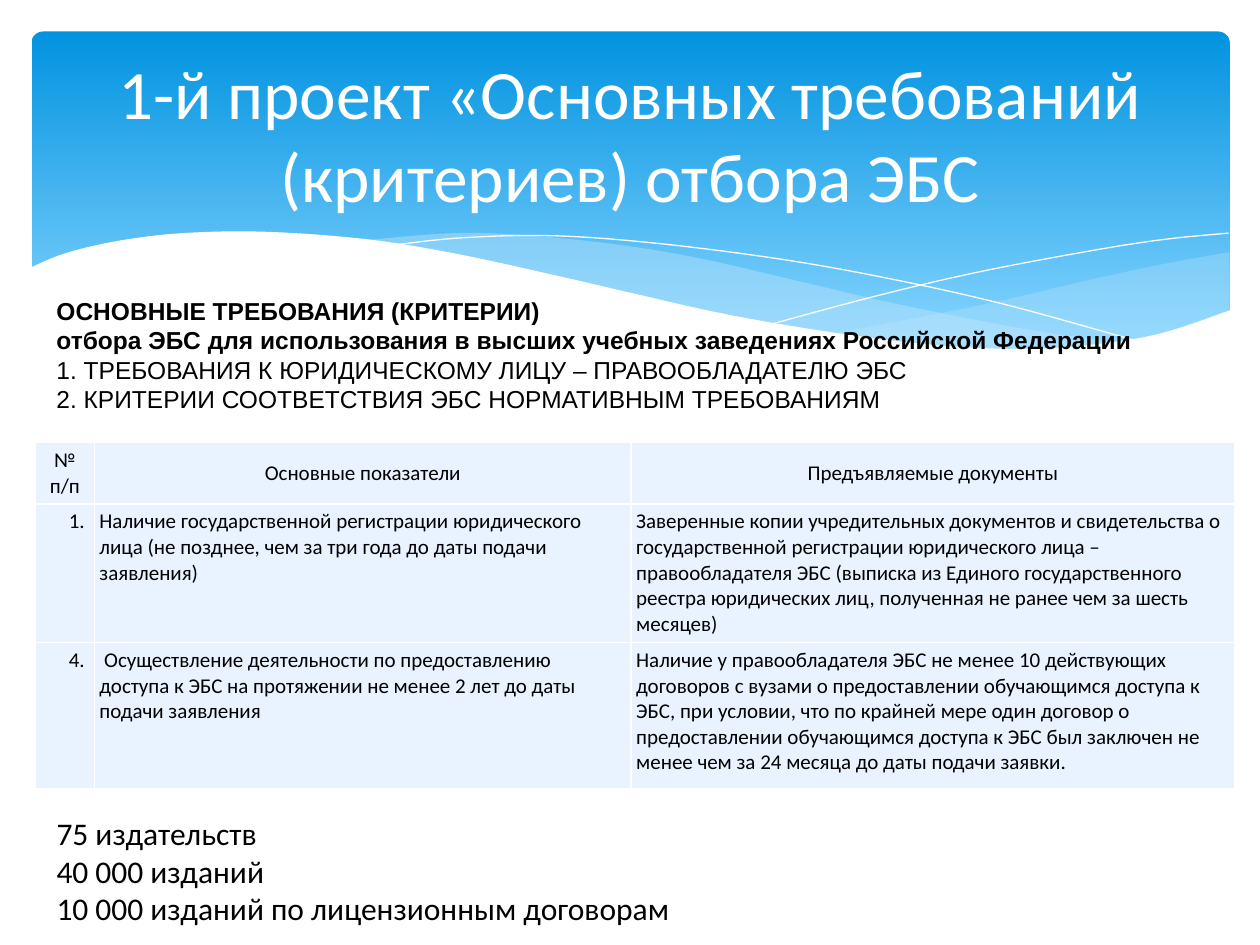
from lxml.etree import SubElement
from pptx import Presentation
from pptx.dml.color import RGBColor as RGB
from pptx.enum.shapes import MSO_SHAPE as SHAPE
from pptx.enum.text import MSO_ANCHOR as ANCHOR, PP_ALIGN as ALIGN
from pptx.oxml.ns import qn
from pptx.util import Inches, Pt

COLS, ROWS = 100, 75  # layout grid over the whole slide
COLORS = {"top": "0293E0", "bottom": "83D3FE", "wave": "C6E7FC",
          "cell": "E8F3FF", "white": "FFFFFF", "text": "000000"}


def smooth(points, steps=6):
    """Catmull-Rom curve through the points."""
    pts = [points[0], *points, points[-1]]
    curve = [points[0]]
    for a, b, c, d in zip(pts, pts[1:], pts[2:], pts[3:]):
        for i in range(1, steps + 1):
            t = i / steps
            curve.append(tuple(
                (2 * q + (r - p) * t + (2 * p - 5 * q + 4 * r - u) * t ** 2
                 + (3 * q - p - 3 * r + u) * t ** 3) / 2
                for p, q, r, u in zip(a, b, c, d)))
    return curve


class Deck:
    font = "Calibri"

    def __init__(self):
        self.prs = Presentation()
        self.prs.slide_width, self.prs.slide_height = Inches(10), Inches(7.5)
        self.s = self.prs.slides.add_slide(self.prs.slide_layouts[5])

    def x(self, col):
        return round(self.prs.slide_width * col / COLS)

    def y(self, row):
        return round(self.prs.slide_height * row / ROWS)

    def box(self, left, top, width, height):
        return self.x(left), self.y(top), self.x(width), self.y(height)

    def color(self, name):
        return RGB.from_string(COLORS[name])

    def set_lines(self, tf, lines, size, font=None, color="text", align=ALIGN.LEFT, bold=0):
        """Fill a text frame; the first `bold` lines are bold."""
        for i, line in enumerate(lines):
            p = tf.paragraphs[0] if i == 0 else tf.add_paragraph()
            p.text, p.alignment = line, align
            p.font.name, p.font.size = font or self.font, Pt(size)
            p.font.bold = i < bold
            p.font.color.rgb = self.color(color)

    def title(self, text, box, size):
        sp = self.s.shapes.title
        self.s.shapes._spTree.append(sp._element)  # bring above the banner
        sp.left, sp.top, sp.width, sp.height = self.box(*box)
        sp.text_frame.vertical_anchor = ANCHOR.MIDDLE
        sp.text_frame.word_wrap = True
        self.set_lines(sp.text_frame, [text], size, color="white", align=ALIGN.CENTER)

    def text(self, lines, box, size, **style):
        tf = self.s.shapes.add_textbox(*self.box(*box)).text_frame
        tf.word_wrap = True
        self.set_lines(tf, lines, size, **style)

    def banner(self, box, radius):
        sp = self.s.shapes.add_shape(SHAPE.ROUNDED_RECTANGLE, *self.box(*box))
        sp.adjustments[0] = radius
        sp.shadow.inherit = False
        sp.line.fill.background()
        sp.fill.gradient()
        sp.fill.gradient_angle = 270
        for stop, pos, name in zip(sp.fill.gradient_stops, (0, 0.9), ("top", "bottom")):
            stop.position, stop.color.rgb = pos, self.color(name)

    def curve(self, points, fill=None, alpha=100):
        """A filled outline, or a white hairline when there is no fill."""
        pts = [(self.x(c), self.y(r)) for c, r in points]
        fb = self.s.shapes.build_freeform(*pts[0], scale=1.0)
        fb.add_line_segments(pts[1:], close=bool(fill))
        sp = fb.convert_to_shape()
        sp.shadow.inherit = False
        if not fill:
            sp.fill.background()
            sp.line.color.rgb = self.color("white")
            sp.line.width = Pt(0)
            return
        sp.line.fill.background()
        sp.fill.solid()
        sp.fill.fore_color.rgb = self.color(fill)
        if alpha < 100:
            clr = sp._element.spPr.find(qn("a:solidFill"))[0]
            SubElement(clr, qn("a:alpha"), val=str(alpha * 1000))

    def border(self, cell):
        for side in "LRTB":
            ln = SubElement(cell._tc.get_or_add_tcPr(), qn("a:ln" + side), w=str(Pt(1)))
            fill = SubElement(ln, qn("a:solidFill"))
            SubElement(fill, qn("a:srgbClr"), val=COLORS["white"])

    def table(self, rows, left, top, widths, heights, size):
        frame = self.s.shapes.add_table(
            len(rows), len(widths), *self.box(left, top, sum(widths), sum(heights)))
        tbl = frame.table
        for col, width in zip(tbl.columns, widths):
            col.width = self.x(width)
        for i, (row, height) in enumerate(zip(rows, heights)):
            tbl.rows[i].height = self.y(height)
            for j, content in enumerate(row):
                cell = tbl.cell(i, j)
                self.border(cell)
                cell.fill.solid()
                cell.fill.fore_color.rgb = self.color("cell")
                cell.margin_left = cell.margin_right = Inches(0.04)
                cell.margin_top = cell.margin_bottom = Inches(0.04)
                cell.vertical_anchor = ANCHOR.TOP if i else ANCHOR.MIDDLE
                align = ALIGN.CENTER if i == 0 else ALIGN.LEFT if j else ALIGN.RIGHT
                self.set_lines(cell.text_frame, content.split("\n"), size, align=align)


def main():
    d = Deck()

    # Banner with waves
    d.banner((2.5, 2.5, 95.1, 27), 0.034)
    d.curve(smooth([(97.6, 20), (92.1, 21), (86.1, 22.3), (77.9, 24.2), (66.1, 26.5)])
            + smooth([(66.1, 26.5), (73.2, 27.4), (80.3, 27.8), (87.2, 27.4),
                      (92.8, 26.3), (97.6, 24.7)]), "wave", 29)
    d.curve(smooth([(89.3, 27.3), (80.7, 26), (70.6, 24), (62.9, 22.2), (55.5, 20.5),
                    (48.9, 19.4), (42, 18.7), (36.1, 18.5), (28.6, 19.1)])
            + smooth([(28.6, 19.1), (36.2, 20.3), (44.9, 22.2), (56.6, 24.8),
                      (66.5, 26.6), (76.1, 27.7), (82.8, 27.8), (89.3, 27.3)]), "wave", 40)
    d.curve(smooth([(30.9, 19.5), (36.3, 18.9), (43.3, 18.7), (51, 19.2), (60.8, 20.4),
                    (69.5, 21.9), (79.5, 24.1), (90.7, 27.2)]))
    d.curve(smooth([(61.3, 25.7), (69.5, 23.5), (77.6, 21.6), (86.6, 19.9),
                    (92.4, 19), (97.5, 18.5)]))
    d.curve(smooth([(97.7, 24.6), (92, 26.5), (86.3, 27.4), (80.9, 27.7), (74.4, 27.4),
                    (66.8, 26.5), (57.9, 25), (50.3, 23.3), (44.7, 22), (36.5, 20.2),
                    (29.2, 19), (21.1, 18.4), (14.6, 18.5), (9.5, 19.1), (5.2, 20.1),
                    (2.3, 21.3)]) + [(2.3, 32.9), (97.7, 32.9)], "white")

    d.title("1-й проект «Основных требований (критериев) отбора ЭБС", (5, 3.7, 90, 13.7), 39.6)

    # Requirements table
    d.table([
        ["№\nп/п", "Основные показатели", "Предъявляемые документы"],
        ["1. ",
         "Наличие государственной регистрации юридического лица "
         "(не позднее, чем за три года до даты подачи заявления)",
         "Заверенные копии учредительных документов и свидетельства о государственной "
         "регистрации юридического лица – правообладателя ЭБС (выписка из Единого "
         "государственного реестра юридических лиц, полученная не ранее чем за шесть месяцев)"],
        ["4. ",
         " Осуществление деятельности по предоставлению доступа к ЭБС "
         "на протяжении не менее 2 лет до даты подачи заявления",
         "Наличие у правообладателя ЭБС не менее 10 действующих договоров с вузами "
         "о предоставлении обучающимся доступа к ЭБС, при условии, что по крайней мере "
         "один договор о предоставлении обучающимся доступа к ЭБС был заключен "
         "не менее чем за 24 месяца до даты подачи заявки."],
    ], 2.8, 35.1, (4.7, 42.6, 47.9), (4.9, 11, 11.6), 12)

    # Heading above the table
    d.text(["ОСНОВНЫЕ ТРЕБОВАНИЯ (КРИТЕРИИ)",
            "отбора ЭБС для использования в высших учебных заведениях Российской Федерации",
            "1. ТРЕБОВАНИЯ К ЮРИДИЧЕСКОМУ ЛИЦУ – ПРАВООБЛАДАТЕЛЮ ЭБС",
            "2. КРИТЕРИИ СООТВЕТСТВИЯ ЭБС НОРМАТИВНЫМ ТРЕБОВАНИЯМ"],
           (3.5, 23, 96, 10.3), 14, font="Arial", bold=2)

    # Totals
    d.text(["75 издательств", "40 000 изданий", "10 000 изданий по лицензионным договорам"],
           (3.5, 64.1, 51.5, 10.1), 18)

    d.prs.save("out.pptx")


if __name__ == "__main__":
    main()
